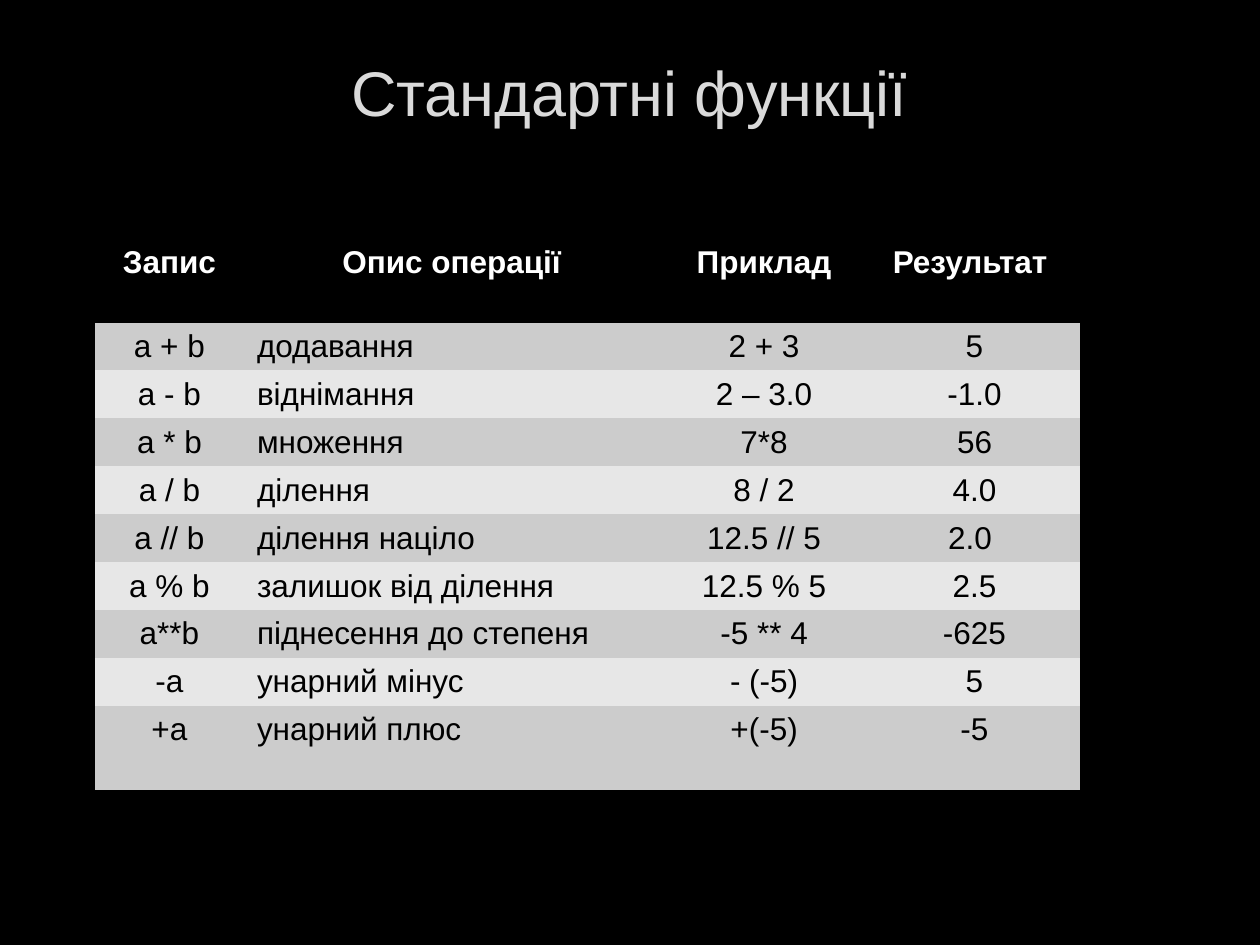
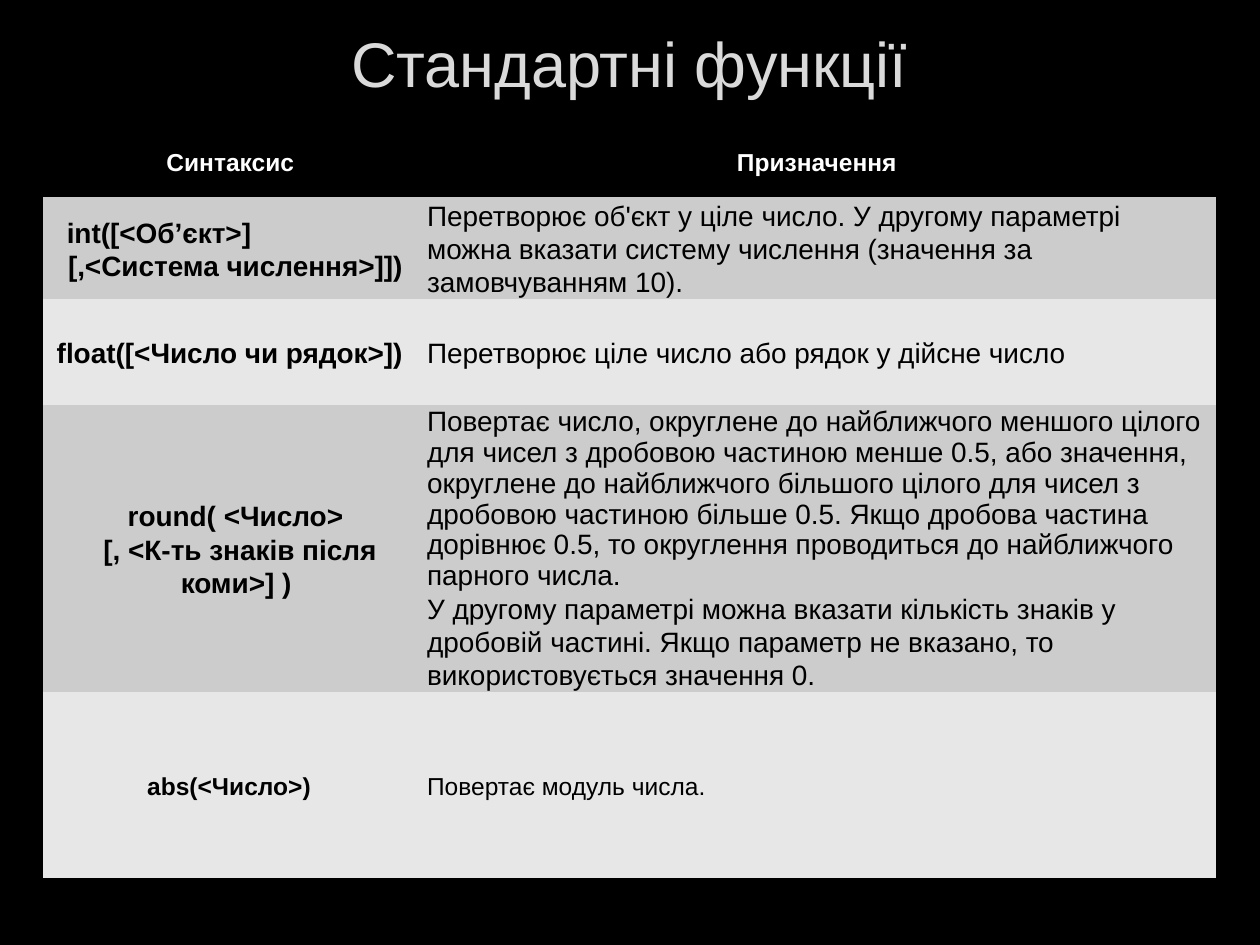
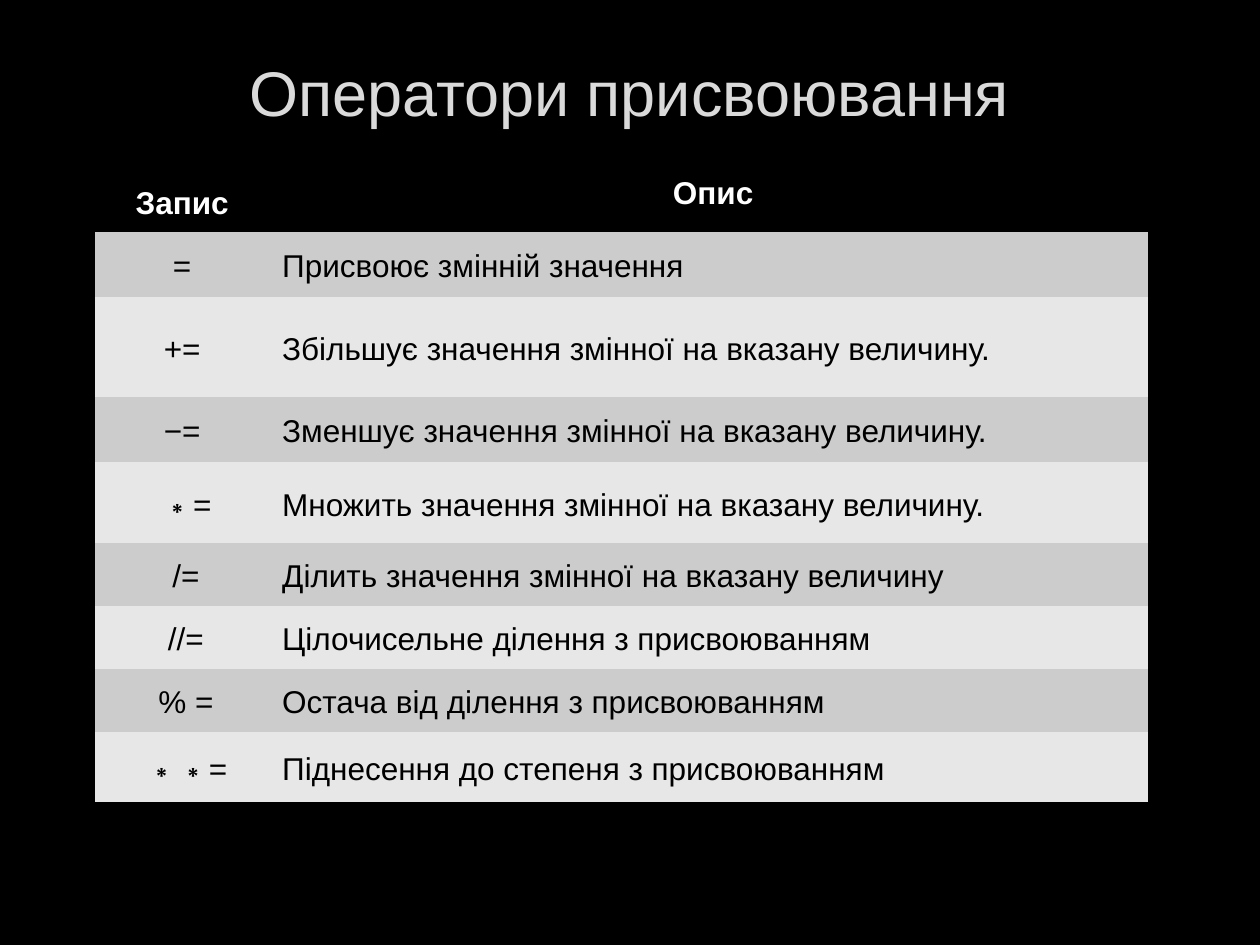
"""Build three slides of tables on Python functions and operators."""
from copy import deepcopy

from lxml import etree
from pptx import Presentation
from pptx import util as u
from pptx.dml import color
from pptx.enum import text
from pptx.oxml import ns

COLORS = {"back": "000000", "title": "DADADA", "outline": "404040",
          "head": "FFFFFF", "body": "000000", "odd": "CCCCCC", "even": "E7E7E7"}
NO_GRID = "{2D5ABB26-0587-4C30-8999-92F81FD0307C}"
LEFT, CENTER, JUSTIFY = text.PP_ALIGN.LEFT, text.PP_ALIGN.CENTER, text.PP_ALIGN.JUSTIFY
TOP, MIDDLE = text.MSO_ANCHOR.TOP, text.MSO_ANCHOR.MIDDLE


def rgb(name):
    return color.RGBColor.from_string(COLORS[name])


def apply(obj, values):
    for key, value in values.items():
        setattr(obj, key, value)


class Deck:
    """Holds the shared style and the current slide."""

    def __init__(self):
        self.prs = Presentation()
        self.prs.slide_width, self.prs.slide_height = u.Inches(10), u.Inches(7.5)
        fill = self.prs.slide_master.background.fill
        fill.solid()
        fill.fore_color.rgb = rgb("back")

    def slide(self, title, top=0.3, height=0.85):
        self.s = self.prs.slides.add_slide(self.prs.slide_layouts[5])
        sp = self.s.shapes.title
        apply(sp, {"left": u.Inches(0.75), "top": u.Inches(top),
                   "width": u.Inches(8.49), "height": u.Inches(height)})
        tf = sp.text_frame
        apply(tf, {"text": title, "word_wrap": True, "vertical_anchor": MIDDLE,
                   "auto_size": text.MSO_AUTO_SIZE.NONE})
        p = tf.paragraphs[0]
        p.alignment = CENTER
        self.font(p, 36, "title", False)
        self.outline(p.runs[0])

    def font(self, p, size, name, bold):
        for r in p.runs:
            apply(r.font, {"size": u.Pt(size), "name": "Arial", "bold": bold})
            r.font.color.rgb = rgb(name)
        for br in p._p.findall(ns.qn("a:br")):
            br.insert(0, deepcopy(p.runs[0]._r.rPr))

    def outline(self, r):
        ln = etree.Element(ns.qn("a:ln"), w=str(u.Pt(0.75)))
        fill = etree.SubElement(ln, ns.qn("a:solidFill"))
        clr = etree.SubElement(fill, ns.qn("a:srgbClr"), val=COLORS["outline"])
        etree.SubElement(clr, ns.qn("a:alpha"), val="10000")
        r._r.get_or_add_rPr().insert(0, ln)

    def table(self, left, top, widths, heights, rows, columns, head, **base):
        frame = self.s.shapes.add_table(
            len(rows), len(widths), u.Inches(left), u.Inches(top),
            u.Inches(sum(widths)), u.Inches(sum(heights)))
        tbl = frame.table
        tbl._tbl.tblPr.find(ns.qn("a:tableStyleId")).text = NO_GRID
        for col, width in zip(tbl.columns, widths):
            col.width = u.Inches(width)
        for i, (row, height, values) in enumerate(zip(tbl.rows, heights, rows)):
            row.height = u.Inches(height)
            fill = ("odd" if i % 2 else "even") if i else "back"
            for cell, value, column in zip(row.cells, values, columns):
                words, own = value if isinstance(value, tuple) else (value, {})
                style = {**base, **(column if i else head), **own}
                self.cell(cell, words, fill, **style)

    def cell(self, cell, words, fill, size=18, name="body", bold=False, align=LEFT,
             anchor=TOP, insets=None, indent=None, spacing=(1.0,)):
        cell.fill.solid()
        cell.fill.fore_color.rgb = rgb(fill)
        cell.vertical_anchor = anchor
        if insets:
            sides = ("margin_left", "margin_top", "margin_right", "margin_bottom")
            apply(cell, {side: u.Inches(v) for side, v in zip(sides, insets)})
        tf = cell.text_frame
        for i, line in enumerate(words if isinstance(words, list) else [words]):
            p = tf.add_paragraph() if i else tf.paragraphs[0]
            apply(p, {"text": line, "alignment": align,
                      "line_spacing": spacing[min(i, len(spacing) - 1)]})
            if indent is not None:
                pPr = p._p.get_or_add_pPr()
                pPr.set("marL", str(u.Inches(indent)))
                pPr.set("indent", str(u.Inches(-0.01)))
            self.font(p, size, name, bold)


def operations(deck):
    deck.slide("Стандартні функції")
    center = {"align": CENTER}
    rows = [
        ("Запис", "Опис операції", "Приклад", "Результат "),
        ("a + b", "додавання", "2 + 3", "5"),
        ("a - b", "віднімання", "2 – 3.0", "-1.0"),
        ("a * b", "множення", "7*8", "56"),
        ("a / b", "ділення", "8 / 2", "4.0"),
        ("a // b", "ділення націло", "12.5 // 5", "2.0 "),
        ("a % b", "залишок від ділення", "12.5 % 5", "2.5"),
        ("a**b", "піднесення до степеня", "-5 ** 4", "-625"),
        ("-a", "унарний мінус", "- (-5)", "5"),
        ("+a", "унарний плюс", "+(-5)", "-5"),
    ]
    deck.table(0.75, 1.89, (1.19, 3.29, 1.67, 1.67), [0.67] + [0.38] * 8 + [0.67],
               rows, (center, {}, center, center),
               {"name": "head", "bold": True, **center})


def functions(deck):
    deck.slide("Стандартні функції", 0.09, 0.81)
    wide = {"insets": (0.07, 0.02, 0.05, 0)}
    small = {**wide, "size": 14}
    rows = [
        ("Синтаксис ", "Призначення "),
        (("int([<Об’єкт>]\n[,<Система числення>]])", {"align": LEFT, "indent": 0.13}),
         ("Перетворює об'єкт у ціле число. У другому параметрі можна вказати "
          "систему числення (значення за замовчуванням 10).", {"anchor": TOP})),
        ("float([<Число чи рядок>]) ", "Перетворює ціле число або рядок у дійсне число"),
        (("round( <Число> \n[, <К-ть знаків після коми>] ) ", {**wide, "indent": 0.13}),
         (["Повертає число, округлене до найближчого меншого цілого для чисел з "
           "дробовою частиною менше 0.5, або значення, округлене до найближчого "
           "більшого цілого для чисел з дробовою частиною більше 0.5. Якщо дробова "
           "частина дорівнює 0.5, то округлення проводиться до найближчого парного "
           "числа.",
           "У другому параметрі можна вказати кількість знаків у дробовій частині. "
           "Якщо параметр не вказано, то використовується значення 0."],
          {**wide, "spacing": (0.99, 1.07)})),
        (("abs(<Число>) ", small), ("Повертає модуль числа.", small)),
    ]
    syntax = {"bold": True, "align": CENTER, "indent": 0.02}
    deck.table(0.34, 1, (2.98, 6.33), (0.56, 0.71, 0.84, 1.94, 1.48), rows,
               (syntax, {"indent": 0}), {**syntax, "name": "head", "size": 14},
               size=16, anchor=MIDDLE, insets=(0.07, 0.02, 0.03, 0), spacing=(1.07,))


def assignments(deck):
    deck.slide("Оператори присвоювання")
    star, slash, just = {"indent": 0.09}, {"indent": 0.08}, {"align": JUSTIFY}
    rows = [
        ("Запис ", ("Опис", {"anchor": TOP})),
        ("= ", ("Присвоює змінній значення ", just)),
        ("+= ", "Збільшує значення змінної на вказану величину."),
        ("−= ", "Зменшує значення змінної на вказану величину."),
        (("∗= ", star), ("Множить значення змінної на вказану величину.", just)),
        (("/= ", slash), ("Ділить значення змінної на вказану величину ", just)),
        (("//= ", slash), "Цілочисельне ділення з присвоюванням"),
        (("% = ", slash), "Остача від ділення з присвоюванням"),
        (("∗∗= ", star), "Піднесення до степеня з присвоюванням"),
    ]
    sign = {"align": CENTER, "indent": 0.02}
    deck.table(0.75, 1.36, (1.44, 6.92),
               (0.48, 0.52, 0.79, 0.52, 0.64, 0.5, 0.5, 0.5, 0.56), rows,
               (sign, {"indent": 0}), {**sign, "name": "head", "bold": True},
               anchor=MIDDLE, insets=(0.05, 0.02, 0.04, 0), spacing=(1.07,))


def main():
    deck = Deck()
    for build in (operations, functions, assignments):
        build(deck)
    deck.prs.save("out.pptx")


if __name__ == "__main__":
    main()
